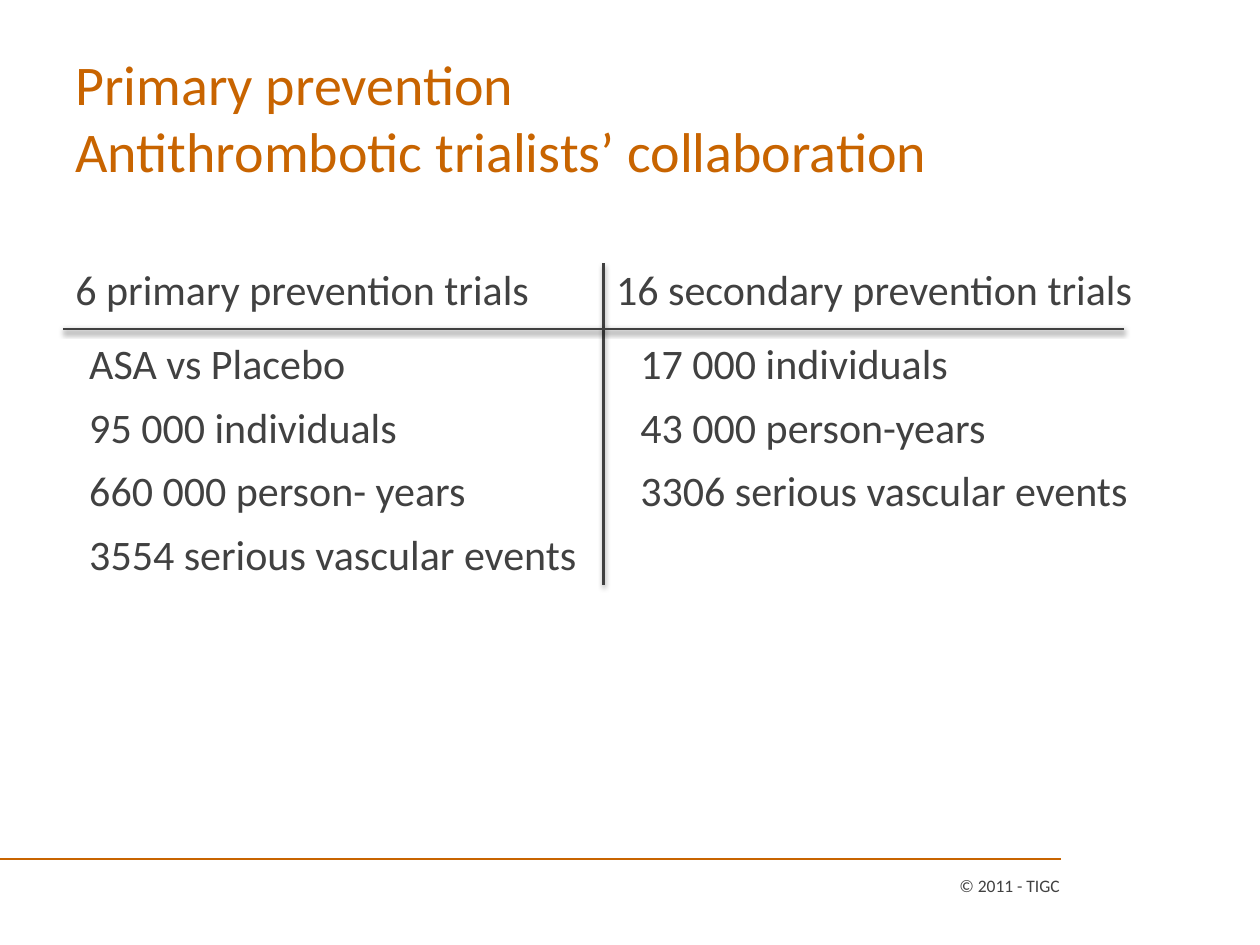
from dataclasses import dataclass

from lxml.etree import SubElement
from pptx import Presentation
from pptx.dml.color import RGBColor as Rgb
from pptx.enum.shapes import MSO_CONNECTOR as Connector
from pptx.enum.text import MSO_ANCHOR as Anchor, PP_ALIGN as Align
from pptx.oxml.ns import qn
from pptx.util import Cm, Pt


@dataclass(frozen=True)
class Theme:
    font: str = "Calibri"
    accent: Rgb = Rgb(0xC8, 0x64, 0x00)
    text: Rgb = Rgb(0x41, 0x41, 0x41)
    rule: Rgb = Rgb(0x40, 0x40, 0x40)
    title_size: int = 32
    body_size: int = 24
    footer_size: int = 10


THEME = Theme()

TITLE = ["Primary prevention", "Antithrombotic trialists’ collaboration"]
FOOTER = "© 2011 - TIGC"
TRIALS = [
    {
        "heading": "6 primary prevention trials",
        "facts": ["ASA vs Placebo", "95 000 individuals",
                  "660 000 person- years", "3554 serious vascular events"],
        "left": 1.27, "width": 13.84, "height": 8.43, "hanging": 0.74,
    },
    {
        "heading": "16 secondary prevention trials",
        "facts": ["17 000 individuals", "43 000 person-years",
                  "3306 serious vascular events"],
        "left": 12.17, "width": 11.96, "height": 7.06, "hanging": 0.53,
    },
]

COLUMNS_TOP = 5.31
HEADING_RULE_Y = 6.63
FOOTER_RULE_Y = 17.32
HEADING_INDENT = 0.95
FACT_INDENT = 1.02


def add_text(slide, box, lines, size, color, anchor=Anchor.TOP):
    text_box = slide.shapes.add_textbox(*map(Cm, box))
    frame = text_box.text_frame
    frame.word_wrap = True
    frame.vertical_anchor = anchor
    frame.text = "\n".join(lines)
    for paragraph in frame.paragraphs:
        for run in paragraph.runs:
            run.font.name = THEME.font
            run.font.size = Pt(size)
            run.font.color.rgb = color
    return frame.paragraphs


def set_hanging(paragraph, margin, hanging):
    properties = paragraph._p.get_or_add_pPr()
    properties.set("marL", str(Cm(margin)))
    properties.set("indent", str(-Cm(hanging)))


def add_rule(slide, start, end, color, width, shadow=False):
    rule = slide.shapes.add_connector(Connector.STRAIGHT, *map(Cm, start + end))
    rule.line.color.rgb = color
    rule.line.width = Pt(width)
    effects = SubElement(rule._element.spPr, qn("a:effectLst"))
    if shadow:
        outer = SubElement(effects, qn("a:outerShdw"), blurRad=str(Pt(3.1)),
                           dist=str(Pt(1.6)), dir="5400000", rotWithShape="0")
        black = SubElement(outer, qn("a:srgbClr"), val="000000")
        SubElement(black, qn("a:alpha"), val="38000")


def add_trials(slide, trials):
    box = (trials["left"], COLUMNS_TOP, trials["width"], trials["height"])
    heading, *facts = add_text(slide, box, [trials["heading"], *trials["facts"]],
                               THEME.body_size, THEME.text)
    set_hanging(heading, HEADING_INDENT, HEADING_INDENT)
    heading.line_spacing = 0.9
    heading.space_after = Pt(12)
    for fact in facts:
        fact.level = 1
        set_hanging(fact, FACT_INDENT, trials["hanging"])
        fact.line_spacing = 0.9
        fact.space_before = Pt(4.4)
        fact.space_after = Pt(6)


def main():
    prs = Presentation()
    prs.slide_width, prs.slide_height = Cm(25.4), Cm(19.05)
    slide = prs.slides.add_slide(prs.slide_layouts[6])

    add_rule(slide, (21.39, FOOTER_RULE_Y), (0, FOOTER_RULE_Y), THEME.accent, 1)
    title = add_text(slide, (1.27, 0.76, 22.86, 3.18), TITLE,
                     THEME.title_size, THEME.accent, Anchor.MIDDLE)
    for line in title:
        set_hanging(line, HEADING_INDENT, HEADING_INDENT)

    for trials in TRIALS:
        add_trials(slide, trials)

    first, second = (trials["left"] for trials in TRIALS)
    for start, end in [((second, COLUMNS_TOP), (second, 11.79)),
                       ((first, HEADING_RULE_Y), (22.66, HEADING_RULE_Y))]:
        add_rule(slide, start, end, THEME.rule, 1.5, shadow=True)

    footer = add_text(slide, (13.56, 17.35, 8.05, 1.02), [FOOTER],
                      THEME.footer_size, THEME.text, Anchor.MIDDLE)
    footer[0].alignment = Align.RIGHT

    prs.save("out.pptx")


if __name__ == "__main__":
    main()
